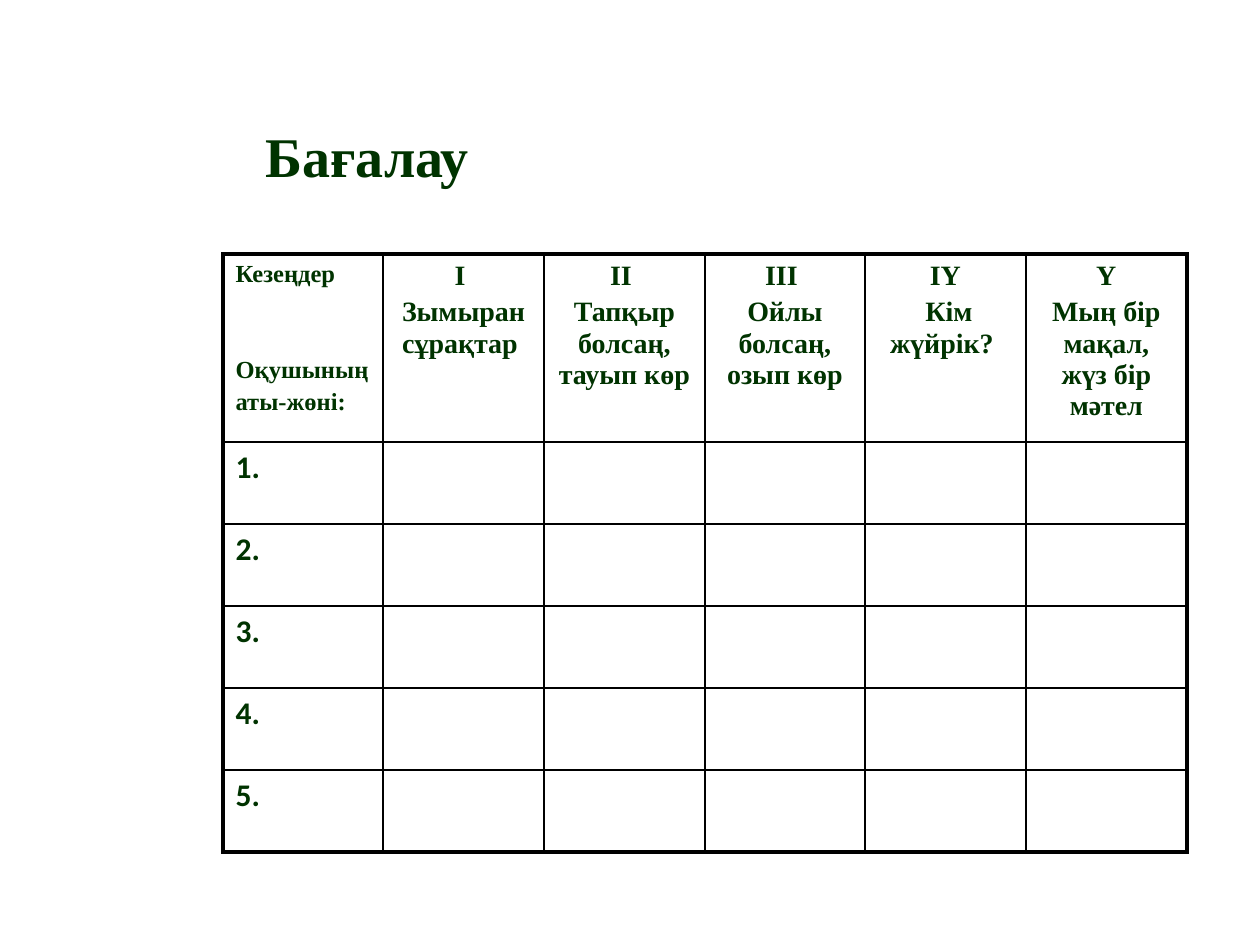
from dataclasses import dataclass
from typing import Any

from lxml import etree
from pptx import Presentation
from pptx import util as u
from pptx.dml.color import RGBColor
from pptx.enum import text
from pptx.oxml import ns

EMU_PER_PX = 914400 / 126


@dataclass(frozen=True)
class Theme:
    ink: str = "003300"
    rule: str = "000000"
    serif: str = "Times New Roman"
    sans: str = "Calibri"
    title: int = 32
    corner: int = 14
    stage: int = 16
    number: int = 18
    thin: float = 1
    thick: float = 2.25


@dataclass(frozen=True)
class Line:
    words: str
    size: int
    face: str
    before: float = 0
    align: Any = text.PP_ALIGN.LEFT


@dataclass(frozen=True)
class Stage:
    numeral: str
    contest: str


THEME = Theme()
COLUMNS = [160, 161, 161, 160, 161, 161]
ROWS = [188] + [82] * 5
STAGES = [
    Stage("I ", "Зымыран cұрақтар "),
    Stage("II ", "Тапқыр болсаң, тауып көр "),
    Stage("III ", "Ойлы болсаң, озып көр"),
    Stage("IY", " Кім жүйрік? "),
    Stage("Y", "Мың бір мақал, жүз бір мәтел"),
]


def px(length: int) -> u.Emu:
    return u.Emu(round(length * EMU_PER_PX))


def apply(target: Any, values: dict[str, Any]) -> None:
    for name, value in values.items():
        setattr(target, name, value)


def write(frame: Any, lines: list[Line]) -> None:
    for index, line in enumerate(lines):
        paragraph = frame.paragraphs[0] if index == 0 else frame.add_paragraph()
        paragraph.alignment = line.align
        if line.before:
            paragraph.space_before = u.Pt(line.before)
        run = paragraph.add_run()
        run.text = line.words
        apply(run.font, {"size": u.Pt(line.size), "name": line.face, "bold": True})
        run.font.color.rgb = RGBColor.from_string(THEME.ink)


def rule_cell(cell: Any, outer: dict[str, bool]) -> None:
    properties = cell._tc.get_or_add_tcPr()
    for side, is_outer in outer.items():
        width = u.Pt(THEME.thick if is_outer else THEME.thin)
        edge = etree.SubElement(properties, ns.qn(f"a:ln{side}"), w=str(int(width)))
        fill = etree.SubElement(edge, ns.qn("a:solidFill"))
        etree.SubElement(fill, ns.qn("a:srgbClr"), val=THEME.rule)


def stage_lines(stage: Stage) -> list[Line]:
    center = text.PP_ALIGN.CENTER
    return [
        Line(stage.numeral, THEME.stage, THEME.serif, align=center),
        Line(stage.contest, THEME.stage, THEME.serif, 3.2, center),
    ]


def draw_title(slide: Any) -> None:
    box = slide.shapes.add_textbox(px(253), px(115), px(232), px(79))
    apply(box.text_frame, {
        "word_wrap": False,
        "auto_size": text.MSO_AUTO_SIZE.SHAPE_TO_FIT_TEXT,
    })
    write(box.text_frame, [Line("Бағалау", THEME.title, THEME.serif)])


def draw_scores(slide: Any) -> None:
    scores = slide.shapes.add_table(
        len(ROWS), len(COLUMNS), px(223), px(254), px(sum(COLUMNS)), px(sum(ROWS))
    ).table
    apply(scores, {"first_row": False, "horz_banding": False})
    for column, width in zip(scores.columns, COLUMNS):
        column.width = px(width)
    for row, height in zip(scores.rows, ROWS):
        row.height = px(height)

    for r in range(len(ROWS)):
        for c in range(len(COLUMNS)):
            cell = scores.cell(r, c)
            rule_cell(cell, {
                "L": c == 0,
                "R": c == len(COLUMNS) - 1,
                "T": r == 0,
                "B": r == len(ROWS) - 1,
            })
            cell.fill.background()

    write(scores.cell(0, 0).text_frame, [
        Line("Кезеңдер", THEME.corner, THEME.serif),
        Line("Оқушының", THEME.corner, THEME.serif, 39.4),
        Line("аты-жөні:", THEME.corner, THEME.serif, 2.8),
    ])
    for c, stage in enumerate(STAGES, start=1):
        write(scores.cell(0, c).text_frame, stage_lines(stage))
    for r in range(1, len(ROWS)):
        write(scores.cell(r, 0).text_frame, [Line(f"{r}.", THEME.number, THEME.sans)])


def main() -> None:
    deck = Presentation()
    apply(deck, {"slide_width": px(1260), "slide_height": px(945)})
    slide = deck.slides.add_slide(deck.slide_layouts[6])
    draw_scores(slide)
    draw_title(slide)
    deck.save("out.pptx")


if __name__ == "__main__":
    main()
